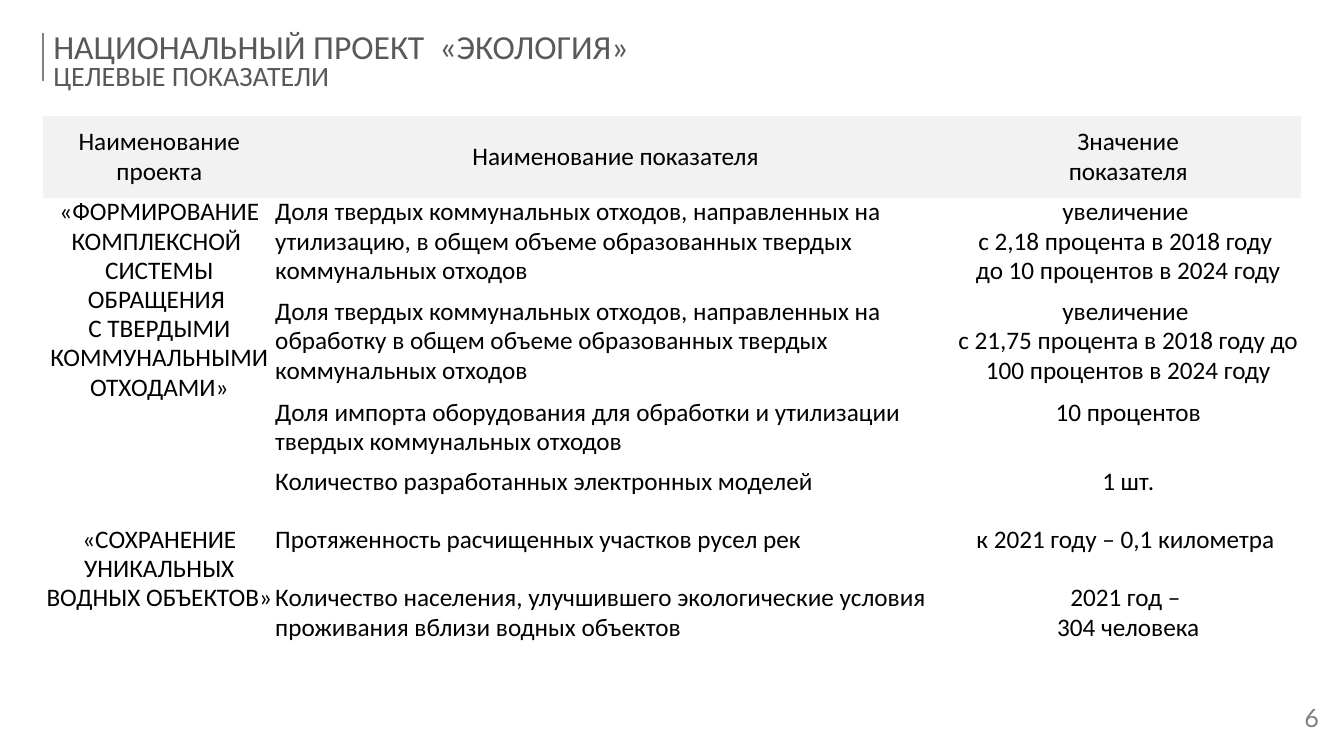
"""Builds the slide with the target indicators of the national ecology project."""
import pptx
import pptx.util
import pptx.dml.color
import pptx.enum.shapes
import pptx.enum.text
import pptx.oxml.ns
import lxml.etree

Inches = pptx.util.Inches
ALIGN = pptx.enum.text.PP_ALIGN
ANCHOR = pptx.enum.text.MSO_ANCHOR

HEADING = "НАЦИОНАЛЬНЫЙ ПРОЕКТ  «ЭКОЛОГИЯ»"
SUBHEADING = "ЦЕЛЕВЫЕ ПОКАЗАТЕЛИ"
PAGE_NUMBER = "6"
COLUMN_HEADS = (
    ["Наименование проекта"],
    ["Наименование показателя"],
    ["Значение", "показателя"],
)
PROJECTS = [
    (
        ["«ФОРМИРОВАНИЕ КОМПЛЕКСНОЙ ", "СИСТЕМЫ ОБРАЩЕНИЯ ",
         "С ТВЕРДЫМИ КОММУНАЛЬНЫМИ ОТХОДАМИ»"],
        [
            ("Доля твердых коммунальных отходов, направленных на утилизацию, "
             "в общем объеме образованных твердых коммунальных отходов",
             ["увеличение ", "с 2,18 процента в 2018 году ",
              "до 10 процентов в 2024 году"]),
            ("Доля твердых коммунальных отходов, направленных на обработку "
             "в общем объеме образованных твердых коммунальных отходов",
             ["увеличение ",
              "с 21,75 процента в 2018 году до 100 процентов в 2024 году"]),
            ("Доля импорта оборудования для обработки и утилизации "
             "твердых коммунальных отходов", ["10 процентов"]),
            ("Количество разработанных электронных моделей", ["1 шт."]),
        ],
    ),
    (
        ["«СОХРАНЕНИЕ УНИКАЛЬНЫХ ВОДНЫХ ОБЪЕКТОВ»"],
        [
            ("Протяженность расчищенных участков русел рек",
             ["к 2021 году – 0,1 километра "]),
            ("Количество населения, улучшившего экологические условия "
             "проживания вблизи водных объектов",
             ["2021 год – ", "304 человека"]),
        ],
    ),
]
COLUMN_WIDTHS = (2.3, 6.75, 3.42)
ROW_HEIGHTS = (0.81, 0.99, 1.0, 0.68, 0.58, 0.58, 0.8)
LEFT, TITLE_TOP, TABLE_TOP = 0.43, 0.33, 1.15
NO_STYLE_NO_GRID = "{2D5ABB26-0587-4C30-8999-92F81FD0307C}"

THEME = {
    "ink": "000000", "title": "595959", "muted": "808080", "head_fill": "F2F2F2",
    "font": "Calibri", "number_font": "Lato",
    "heading_size": 24, "subheading_size": 20, "body_size": 18,
}


def rgb(name):
    """Return a theme colour."""
    return pptx.dml.color.RGBColor.from_string(THEME[name])


def write(frame, lines, sizes=("body_size",), font="font", color="ink",
          align=ALIGN.LEFT, spacing=0.95):
    """Fill a text frame with one paragraph per line; the last size repeats."""
    for index, line in enumerate(lines):
        paragraph = frame.add_paragraph() if index else frame.paragraphs[0]
        paragraph.alignment = align
        paragraph.line_spacing = spacing
        run = paragraph.add_run()
        run.text = line
        run.font.name = THEME[font]
        run.font.size = pptx.util.Pt(THEME[sizes[min(index, len(sizes) - 1)]])
        run.font.color.rgb = rgb(color)


def add_text(slide, box, lines, anchor, **text_format):
    """Add a wrapping text box with no vertical insets."""
    frame = slide.shapes.add_textbox(*map(Inches, box)).text_frame
    frame.word_wrap = True
    frame.margin_top = frame.margin_bottom = 0
    frame.vertical_anchor = anchor
    write(frame, lines, spacing=0.8, **text_format)


def add_title_rule(slide):
    """Draw the vertical rule beside the title."""
    rule = slide.shapes.add_connector(
        pptx.enum.shapes.MSO_CONNECTOR.STRAIGHT,
        Inches(LEFT), Inches(TITLE_TOP), Inches(LEFT), Inches(0.8))
    rule.line.color.rgb = rgb("muted")
    rule.line.width = pptx.util.Pt(1.5)
    lxml.etree.SubElement(rule._element.spPr, pptx.oxml.ns.qn("a:effectLst"))


def fill_cell(cell, lines, align=ALIGN.CENTER, head=False):
    """Write a table cell without insets."""
    cell.margin_left = cell.margin_right = cell.margin_top = cell.margin_bottom = 0
    cell.vertical_anchor = ANCHOR.MIDDLE if head else ANCHOR.TOP
    if head:
        cell.fill.solid()
        cell.fill.fore_color.rgb = rgb("head_fill")
    else:
        cell.fill.background()
    write(cell.text_frame, lines, align=align)


def add_indicators(slide):
    """Add the table of projects, indicators and values."""
    table = slide.shapes.add_table(
        len(ROW_HEIGHTS), len(COLUMN_WIDTHS), Inches(LEFT), Inches(TABLE_TOP),
        Inches(sum(COLUMN_WIDTHS)), Inches(sum(ROW_HEIGHTS))).table
    table.first_row = table.horz_banding = False
    table._tbl.tblPr.find(pptx.oxml.ns.qn("a:tableStyleId")).text = NO_STYLE_NO_GRID
    for column, width in zip(table.columns, COLUMN_WIDTHS):
        column.width = Inches(width)
    for row, height in zip(table.rows, ROW_HEIGHTS):
        row.height = Inches(height)
    for column, head in enumerate(COLUMN_HEADS):
        fill_cell(table.cell(0, column), head, head=True)
    first = 1
    for project, indicators in PROJECTS:
        last = first + len(indicators) - 1
        table.cell(first, 0).merge(table.cell(last, 0))
        fill_cell(table.cell(first, 0), project)
        for row, (indicator, value) in enumerate(indicators, first):
            fill_cell(table.cell(row, 1), [indicator], align=ALIGN.LEFT)
            fill_cell(table.cell(row, 2), value)
        first = last + 1


def main():
    """Build and save the slide."""
    deck = pptx.Presentation()
    deck.slide_width, deck.slide_height = Inches(13.33), Inches(7.5)
    slide = deck.slides.add_slide(deck.slide_layouts[6])
    add_title_rule(slide)
    add_text(slide, (12.43, 6.9, 1.16, 0.5), [PAGE_NUMBER], ANCHOR.MIDDLE,
             font="number_font", color="muted", align=ALIGN.CENTER)
    add_text(slide, (LEFT, TITLE_TOP, 12.65, 6.74), [HEADING, SUBHEADING], ANCHOR.TOP,
             sizes=("heading_size", "subheading_size"), color="title")
    add_indicators(slide)
    deck.save("out.pptx")


if __name__ == "__main__":
    main()
